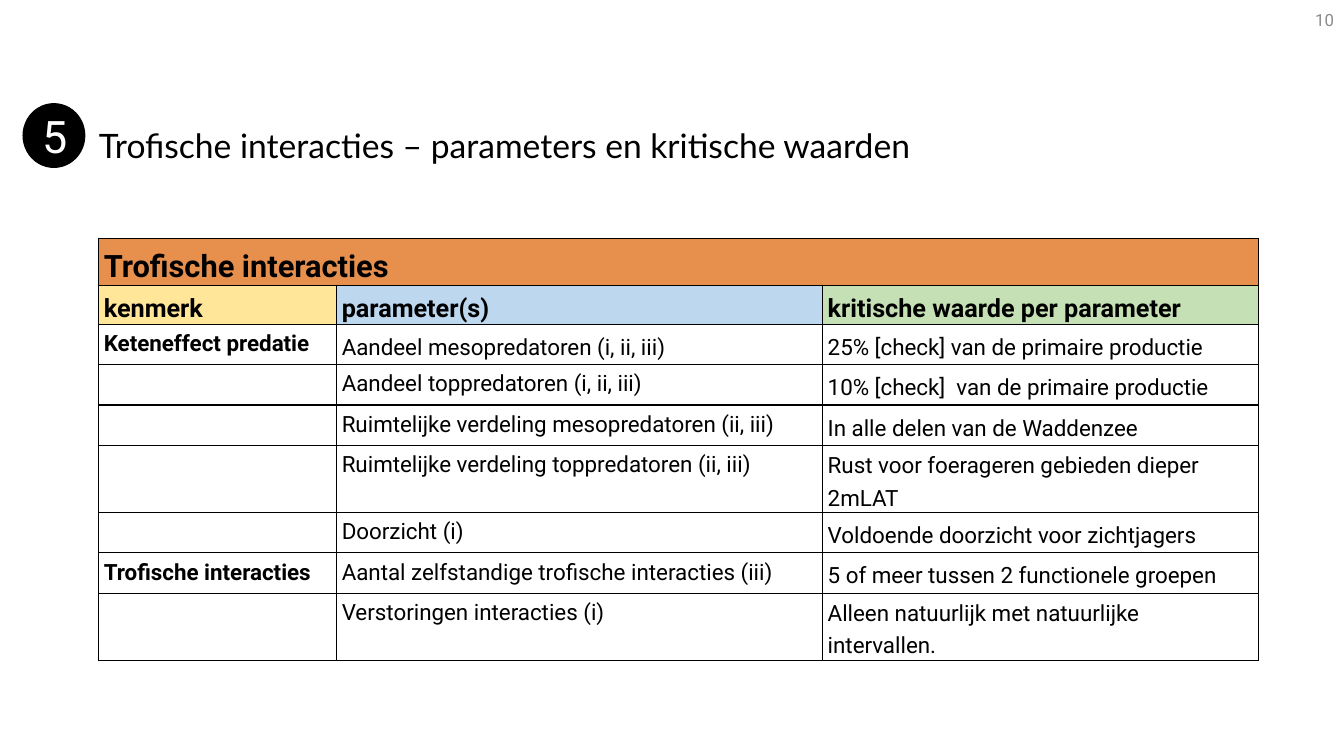
from pptx import Presentation
from pptx import util as u
from pptx.dml.color import RGBColor
from pptx.enum import shapes, text
from pptx.oxml import parse_xml
from pptx.oxml.ns import nsdecls


def rgb(value):
    return RGBColor.from_string(value)


def write(frame, words, color, font, layout, box):
    paragraph = frame.paragraphs[0]
    run = paragraph.add_run()
    run.text = words
    run.font.color.rgb = rgb(color)
    for target, values in ((run.font, font), (paragraph, layout), (frame, box)):
        for key, value in values.items():
            setattr(target, key, value)


ANCHOR, ALIGN = text.MSO_ANCHOR, text.PP_ALIGN
BLACK, WHITE = "000000", "FFFFFF"
MARGINS = ["margin_left", "margin_right", "margin_top", "margin_bottom"]

deck = Presentation()
deck.slide_width, deck.slide_height = u.Inches(13.33), u.Inches(7.5)
slide = deck.slides.add_slide(deck.slide_layouts[5])

heading = slide.shapes.title
place = {"left": 0.98, "top": 1.28, "width": 11.5, "height": 0.63}
for key, value in place.items():
    setattr(heading, key, u.Inches(value))
write(heading.text_frame, "Trofische interacties – parameters en kritische waarden", BLACK,
      {"name": "Lato", "size": u.Pt(24)},
      {"alignment": ALIGN.LEFT, "line_spacing": 0.9},
      {"vertical_anchor": ANCHOR.TOP, "word_wrap": True,
       "auto_size": text.MSO_AUTO_SIZE.NONE, **dict.fromkeys(MARGINS, 0)})

page = slide.shapes.add_textbox(u.Inches(10.33), 0, u.Inches(3), u.Inches(0.4))
write(page.text_frame, "10", "8C8C8C", {"name": "Roboto", "size": u.Pt(12)},
      {"alignment": ALIGN.RIGHT}, {"vertical_anchor": ANCHOR.MIDDLE, "word_wrap": True})

rows = [
    ("Trofische interacties", "", ""),
    ("kenmerk", "parameter(s)", "kritische waarde per parameter"),
    ("Keteneffect predatie", "Aandeel mesopredatoren (i, ii, iii)",
     "25% [check] van de primaire productie"),
    ("", "Aandeel toppredatoren (i, ii, iii)", "10% [check]  van de primaire productie"),
    ("", "Ruimtelijke verdeling mesopredatoren (ii, iii)", "In alle delen van de Waddenzee"),
    ("", "Ruimtelijke verdeling toppredatoren (ii, iii)",
     "Rust voor foerageren gebieden dieper 2mLAT"),
    ("", "Doorzicht (i)", "Voldoende doorzicht voor zichtjagers"),
    ("Trofische interacties", "Aantal zelfstandige trofische interacties (iii)",
     "5 of meer tussen 2 functionele groepen"),
    ("", "Verstoringen interacties (i)", "Alleen natuurlijk met natuurlijke intervallen."),
]
widths = [2.36, 4.82, 4.32]
heights = [0.45, 0.39, 0.4, 0.4, 0.4, 0.65, 0.4, 0.4, 0.65]
header_fills = [["E7904E"] * 3, ["FFE699", "BDD7EE", "C5E0B4"]]
header_sizes = [22, 18]

interactions = slide.shapes.add_table(
    len(rows), len(widths), u.Inches(0.98), u.Inches(2.37),
    u.Inches(sum(widths)), u.Inches(sum(heights))).table
for column, width in zip(interactions.columns, widths):
    column.width = u.Inches(width)
interactions.cell(0, 0).merge(interactions.cell(0, 2))

for r, (entries, height) in enumerate(zip(rows, heights)):
    interactions.rows[r].height = u.Inches(height)
    header = r < len(header_fills)
    for c, entry in enumerate(entries):
        cell = interactions.cell(r, c)
        for key, value in zip(MARGINS, [0.05, 0.05, 0, 0]):
            setattr(cell, key, u.Inches(value))
        for side in ("lnL", "lnR", "lnT", "lnB"):
            cell._tc.get_or_add_tcPr().append(parse_xml(
                f'<a:{side} {nsdecls("a")} w="12700"><a:solidFill>'
                f'<a:srgbClr val="{BLACK}"/></a:solidFill></a:{side}>'))
        cell.fill.solid()
        cell.fill.fore_color.rgb = rgb(header_fills[r][c] if header else WHITE)
        middle = header or c == 2 or (r, c) == (2, 1)
        cell.vertical_anchor = ANCHOR.MIDDLE if middle else ANCHOR.TOP
        if entry:
            size = header_sizes[r] if header else 16
            write(cell.text_frame, entry, BLACK,
                  {"name": "Roboto", "size": u.Pt(size), "bold": header or c == 0},
                  {"line_spacing": 1.25, "space_after": u.Pt(8)}, {})

number = slide.shapes.add_shape(shapes.MSO_SHAPE.OVAL, u.Inches(0.23), u.Inches(1.03),
                                u.Inches(0.61), u.Inches(0.63))
number.shadow.inherit = False
number.fill.solid()
number.fill.fore_color.rgb = rgb(BLACK)
number.line.color.rgb = rgb(BLACK)
number.line.width = u.Pt(1)
write(number.text_frame, "5", WHITE, {"name": "Roboto", "size": u.Pt(32)},
      {"alignment": ALIGN.CENTER}, {"vertical_anchor": ANCHOR.MIDDLE})

deck.save("out.pptx")
